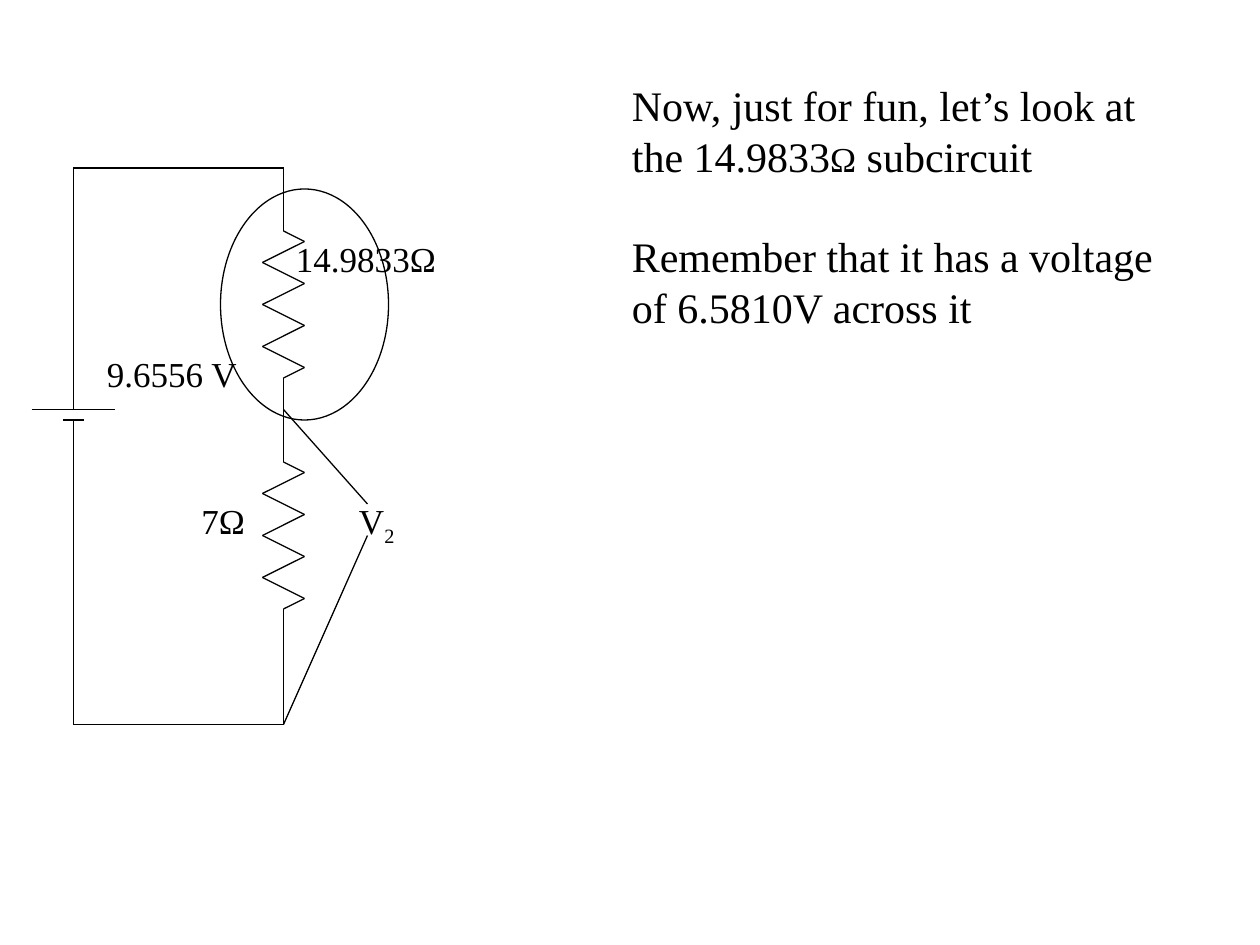
from itertools import pairwise

from lxml.etree import SubElement
from pptx import Presentation
from pptx.dml.color import RGBColor
from pptx.enum.shapes import MSO_CONNECTOR as Connector, MSO_SHAPE as Shape
from pptx.enum.text import MSO_AUTO_SIZE as AutoSize
from pptx.oxml.ns import qn
from pptx.util import Pt

FONT = "Times New Roman"
BLACK = "000000"


def paint(color_format, color):
    color_format.rgb = RGBColor.from_string(color)


def draw_path(slide, points):
    for start, end in pairwise(points):
        line = slide.shapes.add_connector(
            Connector.STRAIGHT, *(Pt(value) for value in (*start, *end)))
        line.line.width = Pt(0.75)
        paint(line.line.color, BLACK)
        SubElement(line._element.spPr, qn("a:effectLst"))


def add_text(slide, left, top, width, height, paragraphs, wrap=False, gap=0):
    box = slide.shapes.add_textbox(Pt(left), Pt(top), Pt(width), Pt(height))
    frame = box.text_frame
    frame.word_wrap = wrap
    frame.auto_size = AutoSize.SHAPE_TO_FIT_TEXT
    for index, runs in enumerate(paragraphs):
        paragraph = frame.add_paragraph() if index else frame.paragraphs[0]
        if index:
            paragraph.space_before = Pt(gap)
        for text, size in runs:
            run = paragraph.add_run()
            run.text = text
            run.font.name = FONT
            run.font.size = Pt(size)
            paint(run.font.color, BLACK)
    return box


def add_resistor(slide, left, top, width, height):
    step = height / 14
    middle, right = left + width / 2, left + width
    turns = [(left if turn % 2 else right, top + step * (1 + 2 * turn))
             for turn in range(7)]
    draw_path(slide, [(middle, top), *turns, (middle, top + height)])


def add_battery(slide, left, top, width, height):
    middle = left + width / 2
    draw_path(slide, [(left, top), (left + width, top)])
    draw_path(slide, [(middle - width / 8, top + height),
                      (middle + width / 8, top + height)])


def add_circuit(slide, left, top, width, height):
    battery_x, branch_x = left + 24, left + 144
    stub_x, meter_x = left + 60, left + 192
    bottom = top + height
    battery_top, battery_gap = top + 138, 6
    resistor_height = 84
    first_top, second_top = top + 36, top + 168

    draw_path(slide, [(battery_x, battery_top), (battery_x, top), (stub_x, top),
                      (branch_x, top), (branch_x, first_top)])
    draw_path(slide, [(battery_x, battery_top + battery_gap),
                      (battery_x, battery_top + 36), (battery_x, bottom),
                      (stub_x, bottom), (branch_x, bottom),
                      (branch_x, second_top + resistor_height)])
    draw_path(slide, [(branch_x, first_top + resistor_height),
                      (branch_x, second_top)])
    add_battery(slide, left, battery_top, 48, battery_gap)
    for resistor_top in (first_top, second_top):
        add_resistor(slide, branch_x - 12, resistor_top, 24, resistor_height)

    draw_path(slide, [(branch_x, battery_top), (meter_x, top + 192)])
    draw_path(slide, [(meter_x, top + 210), (branch_x, bottom)])

    labels = [
        ("9.6556 V", left + 36, top + 102, 89.3),
        ("7Ω", left + 90, top + 186, 39.6),
        ("14.9833Ω", branch_x, first_top, 94.3),
    ]
    for text, x, y, label_width in labels:
        add_text(slide, x, y, label_width, 31, [[(text, 20)]])
    meter = add_text(slide, left + 180, top + 186, 35.3, 31,
                     [[("V", 20), ("2", 20)]])
    subscript = meter.text_frame.paragraphs[0].runs[1]
    subscript.font._element.set("baseline", "-25000")

    highlight = slide.shapes.add_shape(
        Shape.OVAL, Pt(left + 108), Pt(top + 12), Pt(96), Pt(132))
    highlight.shadow.inherit = False
    highlight.fill.background()
    highlight.line.width = Pt(0.75)
    paint(highlight.line.color, BLACK)


def add_explanation(slide, left, top, width, height):
    add_text(slide, left, top, width, height, [
        [("Now, just for fun, let’s look at the 14.9833", 24),
         ("Ω", 20), (" subcircuit", 24)],
        [("Remember that it has a voltage of 6.5810V across it", 24)],
    ], wrap=True, gap=28.8)


def main():
    presentation = Presentation()
    presentation.slide_width, presentation.slide_height = Pt(720), Pt(540)
    slide = presentation.slides.add_slide(presentation.slide_layouts[6])
    add_circuit(slide, 18, 96, 240, 318)
    add_explanation(slide, 354, 42, 336, 180)
    presentation.save("out.pptx")


if __name__ == "__main__":
    main()
